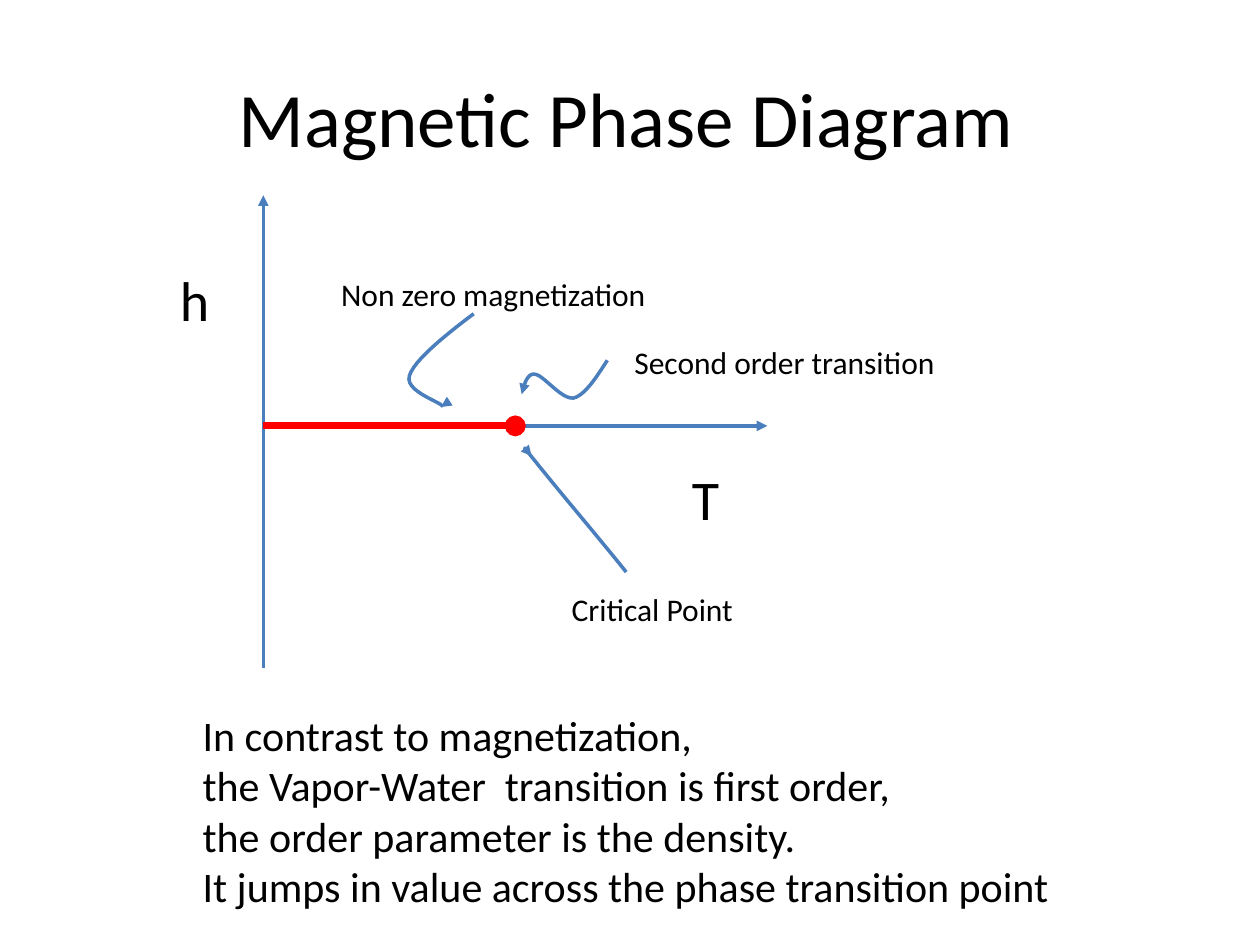
from pptx import Presentation
from pptx.dml.color import RGBColor
from pptx.enum.shapes import MSO_CONNECTOR
from pptx.enum.text import MSO_ANCHOR, PP_ALIGN
from pptx.oxml.ns import qn
from pptx.util import Inches, Pt
from lxml import etree

BLUE, RED, BLACK = "4B7EBC", "FF0000", "000000"
STEPS = 12  # straight pieces per curve

prs = Presentation()
prs.slide_width, prs.slide_height = Inches(10), Inches(7.5)
s = prs.slides.add_slide(prs.slide_layouts[6])


def add_text(lines, x, y, w, h, size, align=PP_ALIGN.CENTER, anchor=MSO_ANCHOR.TOP):
    tf = s.shapes.add_textbox(Inches(x), Inches(y), Inches(w), Inches(h)).text_frame
    tf.word_wrap = False
    tf.vertical_anchor = anchor
    for i, line in enumerate(lines):
        p = tf.paragraphs[0] if i == 0 else tf.add_paragraph()
        p.text = line
        p.alignment = align
        p.font.name, p.font.size = "Calibri", Pt(size)
        p.font.color.rgb = RGBColor.from_string(BLACK)


def style_line(sp, color, width, end):
    sp.line.color.rgb = RGBColor.from_string(color)
    sp.line.width = Pt(width)
    ln = sp.line._get_or_add_ln()
    etree.SubElement(ln, qn("a:tailEnd"), type=end)
    etree.SubElement(sp._element.spPr, qn("a:effectLst"))


# Title
add_text(["Magnetic Phase Diagram"], 0.47, 0.3, 9, 1.25, 44, anchor=MSO_ANCHOR.MIDDLE)

# Axes, then the transition line ending at the critical point
for x1, y1, x2, y2, color, width, end in [
    (2.09, 3.38, 6.09, 3.38, BLUE, 2, "triangle"),
    (2.09, 5.3, 2.09, 1.55, BLUE, 2, "triangle"),
    (2.09, 3.38, 4.09, 3.38, RED, 4, "oval"),
]:
    sp = s.shapes.add_connector(
        MSO_CONNECTOR.STRAIGHT, Inches(x1), Inches(y1), Inches(x2), Inches(y2))
    style_line(sp, color, width, end)

# Curved pointers: a start, then (control, control, end) for each Bezier piece
pointers = [
    # Critical point
    [(4.97, 4.54),
     ((4.73, 4.24), (4.48, 3.95), (4.24, 3.65)),
     ((4.12, 3.5), (4.17, 3.56), (4.22, 3.62))],
    # Non zero magnetization
    [(3.76, 2.49),
     ((3.52, 2.67), (3.29, 2.86), (3.25, 2.98)),
     ((3.21, 3.1), (3.47, 3.18), (3.51, 3.22)),
     ((3.56, 3.26), (3.53, 3.22), (3.53, 3.22)),
     ((3.52, 3.22), (3.51, 3.22), (3.5, 3.23))],
    # Second order transition
    [(4.82, 2.86),
     ((4.73, 3), (4.64, 3.14), (4.55, 3.16)),
     ((4.45, 3.17), (4.31, 2.97), (4.24, 2.97)),
     ((4.17, 2.96), (4.14, 3.13), (4.14, 3.13))],
]
for start, *pieces in pointers:
    points, a = [], start
    for b, c, d in pieces:
        for t in (i / STEPS for i in range(1, STEPS + 1)):
            u = 1 - t
            points.append(tuple(
                Inches(u**3 * a[k] + 3 * u * u * t * b[k] + 3 * u * t * t * c[k] + t**3 * d[k])
                for k in (0, 1)))
        a = d
    builder = s.shapes.build_freeform(Inches(start[0]), Inches(start[1]))
    builder.add_line_segments(points, close=False)
    sp = builder.convert_to_shape()
    sp.fill.background()
    style_line(sp, BLUE, 2, "triangle")

# Axis names and pointer labels
add_text(["h"], 1.33, 2.06, 0.42, 0.83, 32, PP_ALIGN.LEFT)
add_text(["T"], 5.39, 3.64, 0.42, 0.64, 32)
add_text(["Critical Point "], 4.43, 4.63, 1.55, 0.4, 18)
add_text(["Non zero magnetization"], 2.59, 2.13, 2.65, 0.4, 18)
add_text(["Second order transition "], 4.84, 2.67, 2.83, 0.4, 18)

# Closing remark
add_text([
    "In contrast to magnetization,",
    "the Vapor-Water  transition is first order,",
    "the order parameter is the density.",
    "It jumps in value across the phase transition point",
], 1.51, 5.58, 6.98, 1.72, 24, PP_ALIGN.LEFT)

prs.save("out.pptx")
